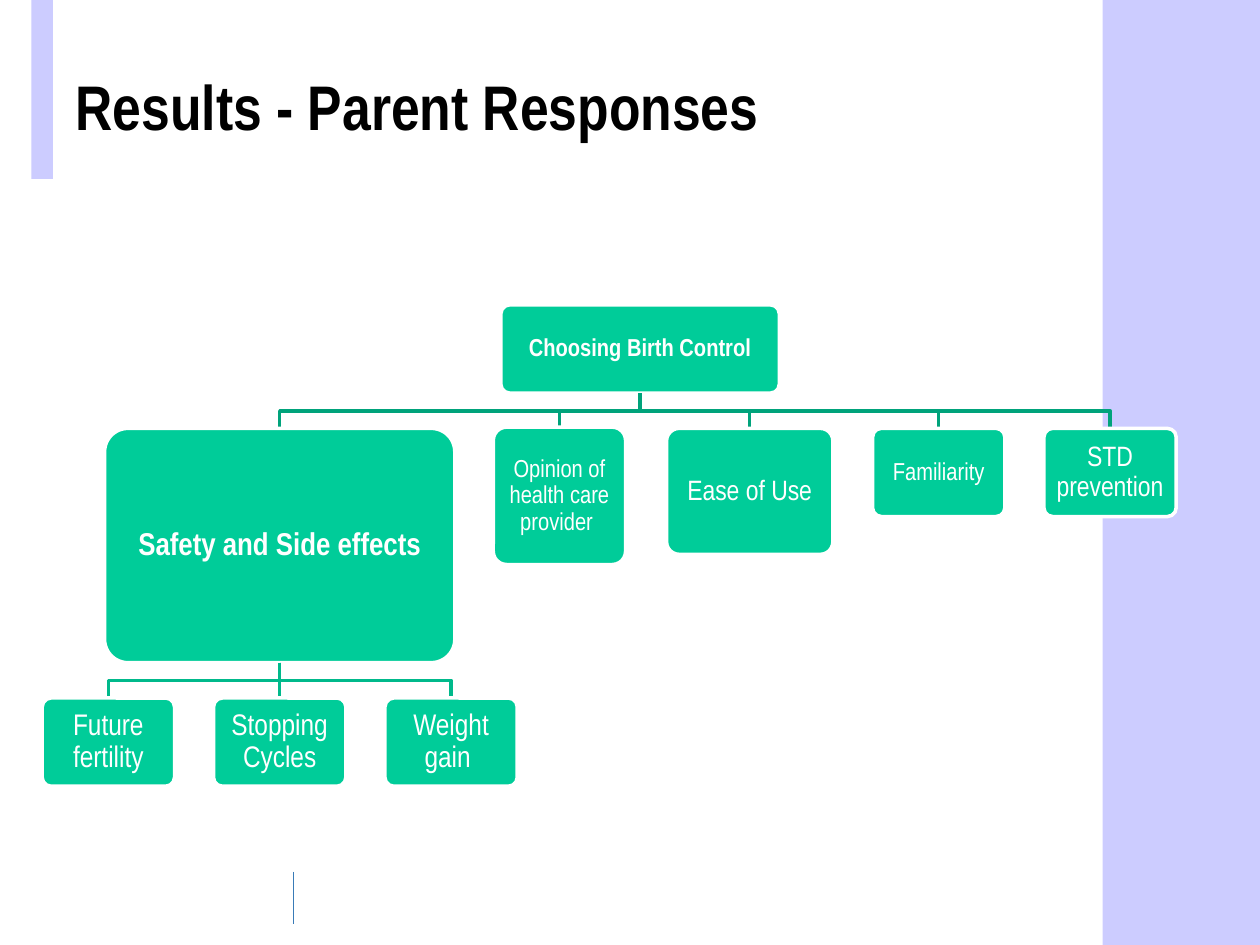
from pptx import Presentation
from pptx.util import Inches, Pt
from pptx.dml.color import RGBColor as RGB
from pptx.enum.shapes import MSO_SHAPE as SHAPE, MSO_CONNECTOR as CONN
from pptx.enum.text import MSO_ANCHOR as ANCHOR, PP_ALIGN as ALIGN
from pptx.oxml.ns import qn
from lxml.etree import SubElement

COLORS = {"band": "CCCCFF", "box": "00CC99", "upper": "00A37B", "lower": "00B98B",
          "tick": "397BB7", "white": "FFFFFF", "black": "000000"}
FONT = "Arial Narrow"


def style(frame, text, size, bold, color, align):
    frame.text = text
    frame.word_wrap = True
    frame.vertical_anchor = ANCHOR.MIDDLE
    para = frame.paragraphs[0]
    para.alignment = align
    font = para.runs[0].font
    font.name, font.size, font.bold = FONT, Pt(size), bold
    font.color.rgb = RGB.from_string(COLORS[color])


def draw_line(points, color, width):
    spots = [(Inches(x), Inches(y)) for x, y in points]
    if len({x for x, y in points}) == 1:
        line = shapes.add_connector(CONN.STRAIGHT, *spots[0], *spots[-1])
        SubElement(line._element.spPr, qn("a:effectLst"))
    else:
        path = shapes.build_freeform(*spots[0])
        path.add_line_segments(spots[1:], close=False)
        line = path.convert_to_shape()
        line.fill.background()
        line.shadow.inherit = False
    line.line.color.rgb = RGB.from_string(COLORS[color])
    line.line.width = Pt(width)


prs = Presentation()
prs.slide_width, prs.slide_height = Inches(10), Inches(7.5)
slide = prs.slides.add_slide(prs.slide_layouts[5])
shapes = slide.shapes

title = shapes.title
title.left, title.top = Inches(0.5), Inches(0)
title.width, title.height = Inches(8.83), Inches(1.67)
style(title.text_frame, "Results - Parent Responses", 36, True, "black", ALIGN.LEFT)

for left, width, height in [(8.75, 1.25, 7.5), (0.25, 0.17, 1.42)]:
    band = shapes.add_shape(SHAPE.RECTANGLE, Inches(left), Inches(0),
                            Inches(width), Inches(height))
    band.shadow.inherit = False
    band.fill.solid()
    band.fill.fore_color.rgb = RGB.from_string(COLORS["band"])
    band.line.fill.background()

draw_line([(2.33, 6.92), (2.33, 7.33)], "tick", 0.75)

ROOT, SAFETY = (5.08, 3.12), (2.22, 5.26)
boxes = [
    ("Choosing Birth Control", 5.08, 2.42, 2.21, 0.7, 14, True, None, None),
    ("Safety and Side effects", 2.22, 3.4, 2.78, 1.86, 18, True, ROOT, "upper"),
    ("Future fertility", 0.86, 5.54, 1.05, 0.7, 17, False, SAFETY, "lower"),
    ("Stopping Cycles", 2.22, 5.54, 1.05, 0.7, 17, False, SAFETY, "lower"),
    ("Weight gain ", 3.58, 5.54, 1.05, 0.7, 17, False, SAFETY, "lower"),
    ("Opinion of health care provider ", 4.44, 3.39, 1.05, 1.09, 14, False, ROOT, "upper"),
    ("Ease of Use", 5.95, 3.4, 1.32, 1, 16, False, ROOT, "upper"),
    ("Familiarity", 7.45, 3.4, 1.05, 0.7, 14, False, ROOT, "upper"),
    ("STD prevention", 8.81, 3.4, 1.05, 0.7, 16, False, ROOT, "upper"),
]
for text, mid, top, width, height, size, bold, start, color in boxes:
    if start:
        x, y = start
        draw_line([(x, y), (x, y + 0.14), (mid, y + 0.14), (mid, top)], color, 2)
    box = shapes.add_shape(SHAPE.ROUNDED_RECTANGLE, Inches(mid - width / 2), Inches(top),
                           Inches(width), Inches(height))
    box.adjustments[0] = 0.1
    box.shadow.inherit = False
    box.fill.solid()
    box.fill.fore_color.rgb = RGB.from_string(COLORS["box"])
    box.line.color.rgb = RGB.from_string(COLORS["white"])
    box.line.width = Pt(2)
    frame = box.text_frame
    style(frame, text, size, bold, "white", ALIGN.CENTER)
    inset = Inches(0.06 if size == 14 else 0.07)
    frame.margin_left = frame.margin_right = inset
    frame.margin_top = frame.margin_bottom = inset
    frame.paragraphs[0].line_spacing = 0.9

prs.save("out.pptx")
